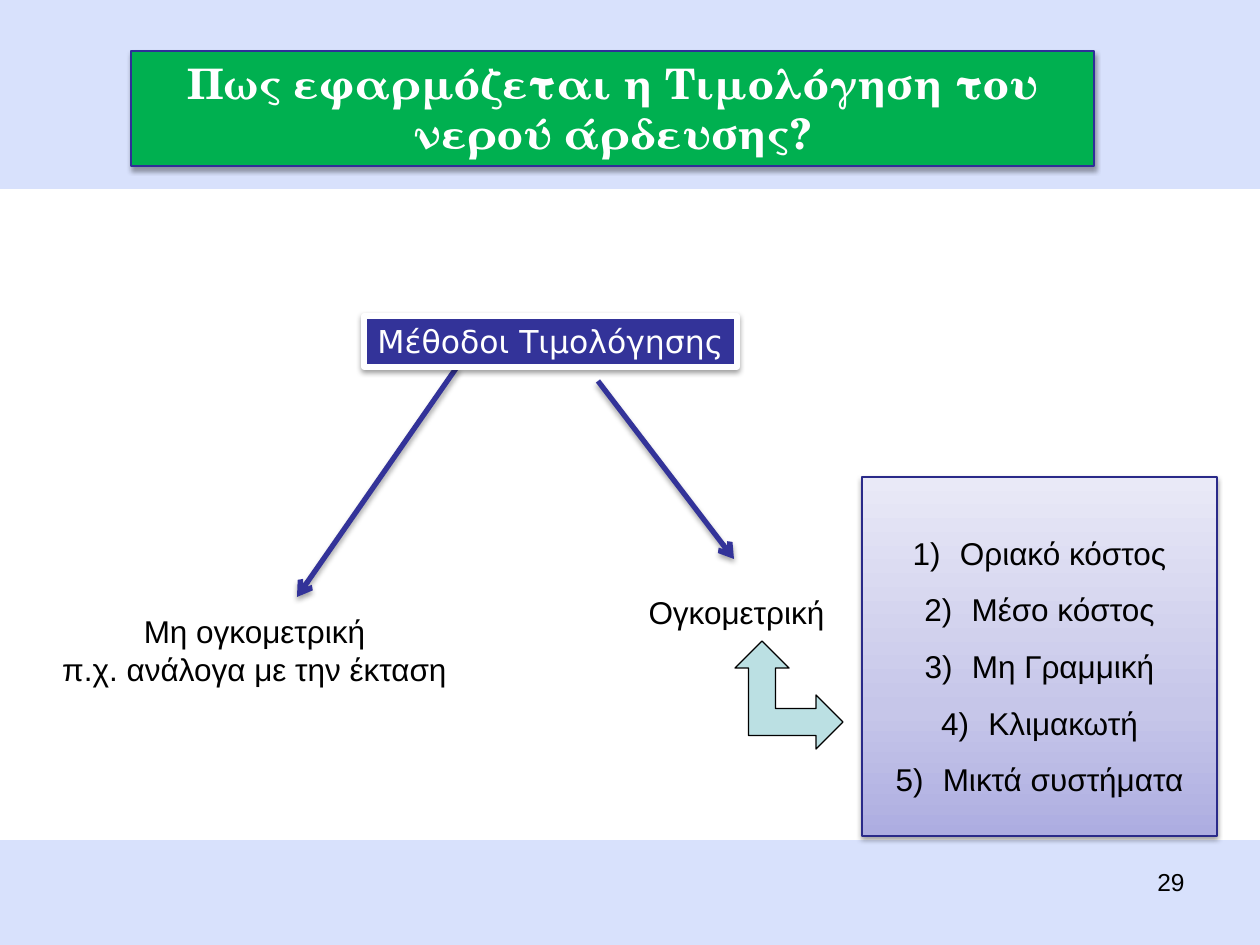
from copy import deepcopy
from lxml.etree import SubElement
from pptx import Presentation
from pptx.dml.color import RGBColor
from pptx.enum.shapes import MSO_CONNECTOR, MSO_SHAPE
from pptx.enum.text import MSO_ANCHOR, PP_ALIGN
from pptx.oxml.ns import qn
from pptx.util import Pt

SCALE = 914400 / 126
RECT, BEND = MSO_SHAPE.RECTANGLE, MSO_SHAPE.LEFT_UP_ARROW
LINE = MSO_CONNECTOR.STRAIGHT
TOP, MID = MSO_ANCHOR.TOP, MSO_ANCHOR.MIDDLE
CENTER, RIGHT = PP_ALIGN.CENTER, PP_ALIGN.RIGHT
SKY = RGBColor(0xD8, 0xE1, 0xFC)
WHITE = RGBColor(0xFF, 0xFF, 0xFF)
BLACK = RGBColor(0, 0, 0)
GREEN = RGBColor(0, 0xB0, 0x50)
BLUE = RGBColor(0x33, 0x33, 0x99)
NAVY = RGBColor(0x2F, 0x2F, 0x98)
INK = RGBColor(0x2A, 0x2A, 0x89)
TEAL = RGBColor(0xBB, 0xE0, 0xE3)
FADE = [(0, RGBColor(0xAD, 0xAD, 0xE1)),
        (0.35, RGBColor(0xC6, 0xC6, 0xE9)),
        (1, RGBColor(0xE9, 0xE9, 0xF7))]
METHODS = ["Οριακό κόστος", "Μέσο κόστος", "Μη Γραμμική",
           "Κλιμακωτή", "Μικτά συστήματα"]


def px(*nums):
    return [round(n * SCALE) for n in nums]


def shade(item, alpha, dist):
    props = item._element.spPr
    old = props.find(qn("a:effectLst"))
    if old is not None:
        props.remove(old)
    glow = SubElement(SubElement(props, qn("a:effectLst")), qn("a:outerShdw"),
                      blurRad=str(Pt(3.1)), dist=str(Pt(dist)),
                      dir="5400000", rotWithShape="0")
    tint = SubElement(glow, qn("a:srgbClr"), val="000000")
    SubElement(tint, qn("a:alpha"), val=str(alpha * 1000))


def block(slide, box, fill=None, line=None, width=0.75, kind=RECT):
    shape = slide.shapes.add_shape(kind, *px(*box))
    shape.shadow.inherit = False
    if fill is not None:
        shape.fill.solid()
        shape.fill.fore_color.rgb = fill
    if line is None:
        shape.line.fill.background()
    else:
        shape.line.color.rgb = line
        shape.line.width = Pt(width)
    return shape


def write(shape, lines, size=18, font="Arial", color=BLACK, bold=False,
          align=CENTER, anchor=TOP, wrap=True):
    frame = shape.text_frame
    frame.word_wrap = wrap
    frame.vertical_anchor = anchor
    for i, line in enumerate(lines):
        para = frame.add_paragraph() if i else frame.paragraphs[0]
        para.alignment = align
        run = para.add_run()
        run.text = line
        run.font.size = Pt(size)
        run.font.name = font
        run.font.bold = bold
        run.font.color.rgb = color
    return frame


def label(slide, box, lines, **style):
    write(slide.shapes.add_textbox(*px(*box)), lines, **style)


def title(slide, box):
    shape = block(slide, box, GREEN, NAVY)
    shade(shape, 35, 1.8)
    write(shape, ["Πως εφαρμόζεται η Τιμολόγηση του νερού άρδευσης?"],
          24, "TeX Gyre Schola", WHITE, True)


def arrow(slide, start, end):
    item = slide.shapes.add_connector(LINE, *px(*start, *end))
    item.line.color.rgb = BLUE
    item.line.width = Pt(3)
    SubElement(item.line._get_or_add_ln(), qn("a:tailEnd"), type="arrow")
    shade(item, 35, 1.8)


def tree(slide, box):
    x, y, w, h = box
    arrow(slide, (x + 409, y + 51), (x + 249, y + 281))
    arrow(slide, (x + 550, y + 65), (x + 686, y + 243))
    label(slide, (x, y + 290, 413, 89),
          ["Μη ογκομετρική", "π.χ. ανάλογα με την έκταση"], wrap=False)
    label(slide, (x + 587, y + 271, 203, 50), ["Ογκομετρική"], wrap=False)
    root = block(slide, (x + 316, y, 373, 51), BLUE, WHITE, 3)
    shade(root, 38, 1.6)
    write(root, ["Μέθοδοι Τιμολόγησης"], font="DejaVu Sans", color=WHITE)
    turn = block(slide, (x + w - 108, y + h - 108, 108, 108), TEAL, BLACK,
                 kind=BEND)
    turn.rotation = 90


def panel(slide, box):
    shape = block(slide, box, line=INK)
    shape.fill.gradient()
    shape.fill.gradient_angle = 90
    stops = shape._element.spPr.find(".//" + qn("a:gsLst"))
    stops.append(deepcopy(stops[0]))
    for stop, (place, color) in zip(shape.fill.gradient_stops, FADE):
        stop.position = place
        stop.color.rgb = color
    shade(shape, 38, 1.6)
    frame = write(shape, METHODS, anchor=MID, wrap=False)
    for para in frame.paragraphs:
        props = para._p.get_or_add_pPr()
        props.set("marL", "342900")
        props.set("indent", "-342900")
        SubElement(props, qn("a:buFont"), typeface="+mj-lt")
        SubElement(props, qn("a:buAutoNum"), type="arabicParenR")
        para.line_spacing = 1.5


def main():
    deck = Presentation()
    deck.slide_width, deck.slide_height = px(1260, 945)
    slide = deck.slides.add_slide(deck.slide_layouts[6])
    slide.background.fill.solid()
    slide.background.fill.fore_color.rgb = SKY
    block(slide, (0, 189, 1260, 651), WHITE)
    label(slide, (903, 861, 294, 66), ["29"], size=14, align=RIGHT)
    title(slide, (131, 51, 963, 115))
    panel(slide, (862, 477, 355, 359))
    tree(slide, (48, 316, 795, 433))
    deck.save("out.pptx")


if __name__ == "__main__":
    main()
